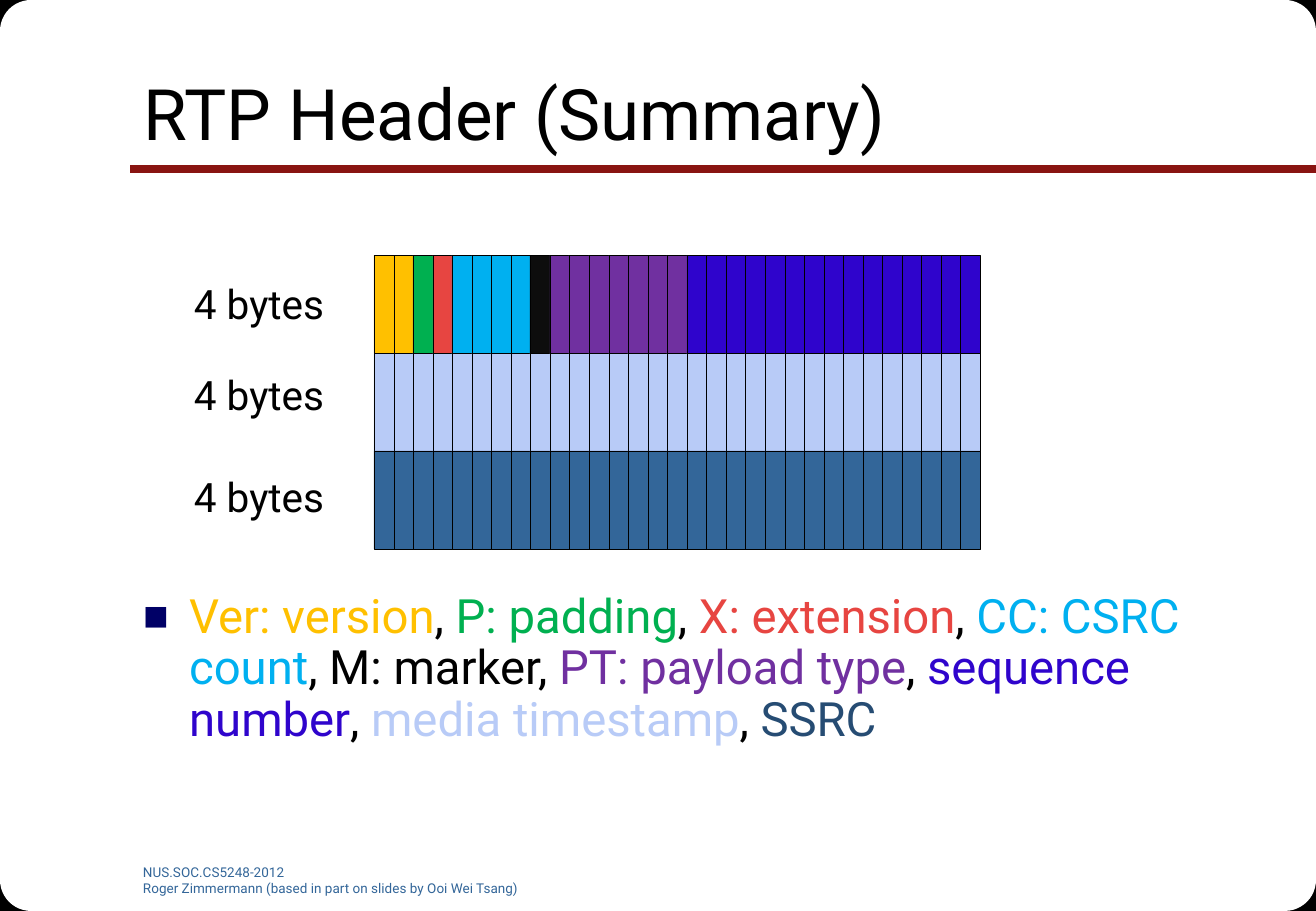
import dataclasses
import itertools
import typing

import lxml.etree
import pptx
import pptx.dml.color
import pptx.enum.shapes
import pptx.enum.text
import pptx.oxml.ns
import pptx.util

PX = 7526
W, H = 1316, 911
SHAPE = pptx.enum.shapes.MSO_SHAPE


@dataclasses.dataclass(frozen=True)
class Theme:
    font: str = "Roboto"
    title_pt: int = 42
    body_pt: int = 28
    label_pt: int = 24
    footer_pt: int = 8
    white: str = "FFFFFF"
    black: str = "000000"
    rule: str = "891411"
    bullet: str = "000066"
    footer: str = "336699"
    version: str = "FFC000"
    padding: str = "00B050"
    extension: str = "E74541"
    csrc: str = "00B0F0"
    marker: str = "0D0D0D"
    payload: str = "7030A0"
    sequence: str = "2F04CC"
    timestamp: str = "B8CBF7"
    ssrc: str = "336699"
    ssrc_text: str = "264C73"


T = Theme()


class Box(typing.NamedTuple):
    x: int
    y: int
    w: int
    h: int


class Field(typing.NamedTuple):
    bits: int
    color: str


class HeaderRow(typing.NamedTuple):
    label_y: int
    fields: tuple[Field, ...]


GRID = Box(374, 255, 606, 98)
BITS = 31
ROWS = (
    HeaderRow(273, (Field(2, T.version), Field(1, T.padding), Field(1, T.extension),
                    Field(4, T.csrc), Field(1, T.marker), Field(7, T.payload),
                    Field(15, T.sequence))),
    HeaderRow(364, (Field(BITS, T.timestamp),)),
    HeaderRow(466, (Field(BITS, T.ssrc),)),
)
LEGEND = (
    ("Ver: version", T.version), (", ", T.black),
    ("P: padding", T.padding), (", ", T.black),
    ("X: extension", T.extension), (", ", T.black),
    ("CC: CSRC count", T.csrc), (", M: marker, ", T.black),
    ("PT: payload type", T.payload), (", ", T.black),
    ("sequence number", T.sequence), (", ", T.black),
    ("media timestamp", T.timestamp), (", ", T.black),
    ("SSRC", T.ssrc_text),
)
FOOTER = ("NUS.SOC.CS5248-2012",
          "Roger Zimmermann (based in part on slides by Ooi Wei Tsang)")


def rgb(color: str) -> pptx.dml.color.RGBColor:
    return pptx.dml.color.RGBColor.from_string(color)


def emu(box: Box) -> list[int]:
    return [v * PX for v in box]


def write(p, text: str, *, size: int, color: str = T.black) -> None:
    r = p.add_run()
    r.text = text
    r.font.name = T.font
    r.font.size = pptx.util.Pt(size)
    r.font.color.rgb = rgb(color)


def add_block(s, kind, box: Box, fill: str, line_pt: float = 0) -> None:
    sp = s.shapes.add_shape(kind, *emu(box))
    sp.shadow.inherit = False
    sp.fill.solid()
    sp.fill.fore_color.rgb = rgb(fill)
    if line_pt:
        sp.line.color.rgb = rgb(T.black)
        sp.line.width = pptx.util.Pt(line_pt)
    else:
        sp.line.fill.background()


def add_textbox(s, box: Box, lines: tuple[str, ...], *, size: int,
                color: str = T.black, wrap: bool = False) -> None:
    tf = s.shapes.add_textbox(*emu(box)).text_frame
    tf.word_wrap = wrap
    for i, line in enumerate(lines):
        p = tf.add_paragraph() if i else tf.paragraphs[0]
        write(p, line, size=size, color=color)


def place(sp, box: Box, anchor):
    sp.left, sp.top, sp.width, sp.height = emu(box)
    sp.element.getparent().append(sp.element)
    tf = sp.text_frame
    tf.auto_size = pptx.enum.text.MSO_AUTO_SIZE.NONE
    tf.vertical_anchor = anchor
    p = tf.paragraphs[0]
    p.alignment = pptx.enum.text.PP_ALIGN.LEFT
    return p


def add_bullet(p, indent: int) -> None:
    qn = pptx.oxml.ns.qn
    pPr = p._p.get_or_add_pPr()
    pPr.set("marL", str(indent * PX))
    pPr.set("indent", str(-indent * PX))
    clr = lxml.etree.SubElement(pPr, qn("a:buClr"))
    lxml.etree.SubElement(clr, qn("a:srgbClr"), val=T.bullet)
    lxml.etree.SubElement(pPr, qn("a:buSzPct"), val="90000")
    lxml.etree.SubElement(pPr, qn("a:buChar"), char="■")


def add_frame(s) -> None:
    for kind, w, h, fill, line_pt in (
        (SHAPE.RECTANGLE, 57, 53, T.black, 0.75),
        (SHAPE.ROUNDED_RECTANGLE, 202, 186, T.white, 0),
    ):
        for x, y in itertools.product((0, W - w), (0, H - h)):
            add_block(s, kind, Box(x, y, w, h), fill, line_pt)
    rule = s.shapes.add_connector(pptx.enum.shapes.MSO_CONNECTOR.STRAIGHT,
                                  W * PX, 169 * PX, 130 * PX, 169 * PX)
    rule.line.color.rgb = rgb(T.rule)
    rule.line.width = pptx.util.Pt(4.5)
    lxml.etree.SubElement(rule.element.spPr, pptx.oxml.ns.qn("a:effectLst"))


def add_header_row(s, index: int, row: HeaderRow) -> None:
    add_textbox(s, Box(182, row.label_y, 156, 62), ("4 bytes",), size=T.label_pt)
    colors = [f.color for f in row.fields for _ in range(f.bits)]
    edges = [GRID.x + round(i * GRID.w / BITS) for i in range(BITS + 1)]
    for color, (left, right) in zip(colors, itertools.pairwise(edges)):
        box = Box(left, GRID.y + index * GRID.h, right - left, GRID.h)
        add_block(s, SHAPE.RECTANGLE, box, color, 0.25)


def main() -> None:
    prs = pptx.Presentation()
    prs.slide_width, prs.slide_height = W * PX, H * PX
    s = prs.slides.add_slide(prs.slide_layouts[1])
    anchor = pptx.enum.text.MSO_ANCHOR

    add_frame(s)
    p = place(s.shapes.title, Box(131, 36, 1119, 152), anchor.MIDDLE)
    write(p, "RTP Header (Summary)", size=T.title_pt)

    for i, row in enumerate(ROWS):
        add_header_row(s, i, row)

    p = place(s.placeholders[1], Box(131, 587, 1119, 227), anchor.TOP)
    p.line_spacing = 0.9
    p.space_before = pptx.util.Pt(5.6)
    add_bullet(p, 46)
    for text, color in LEGEND:
        write(p, text, size=T.body_pt, color=color)

    add_textbox(s, Box(131, 858, 416, 34), FOOTER,
                size=T.footer_pt, color=T.footer, wrap=True)
    prs.save("out.pptx")


if __name__ == "__main__":
    main()
